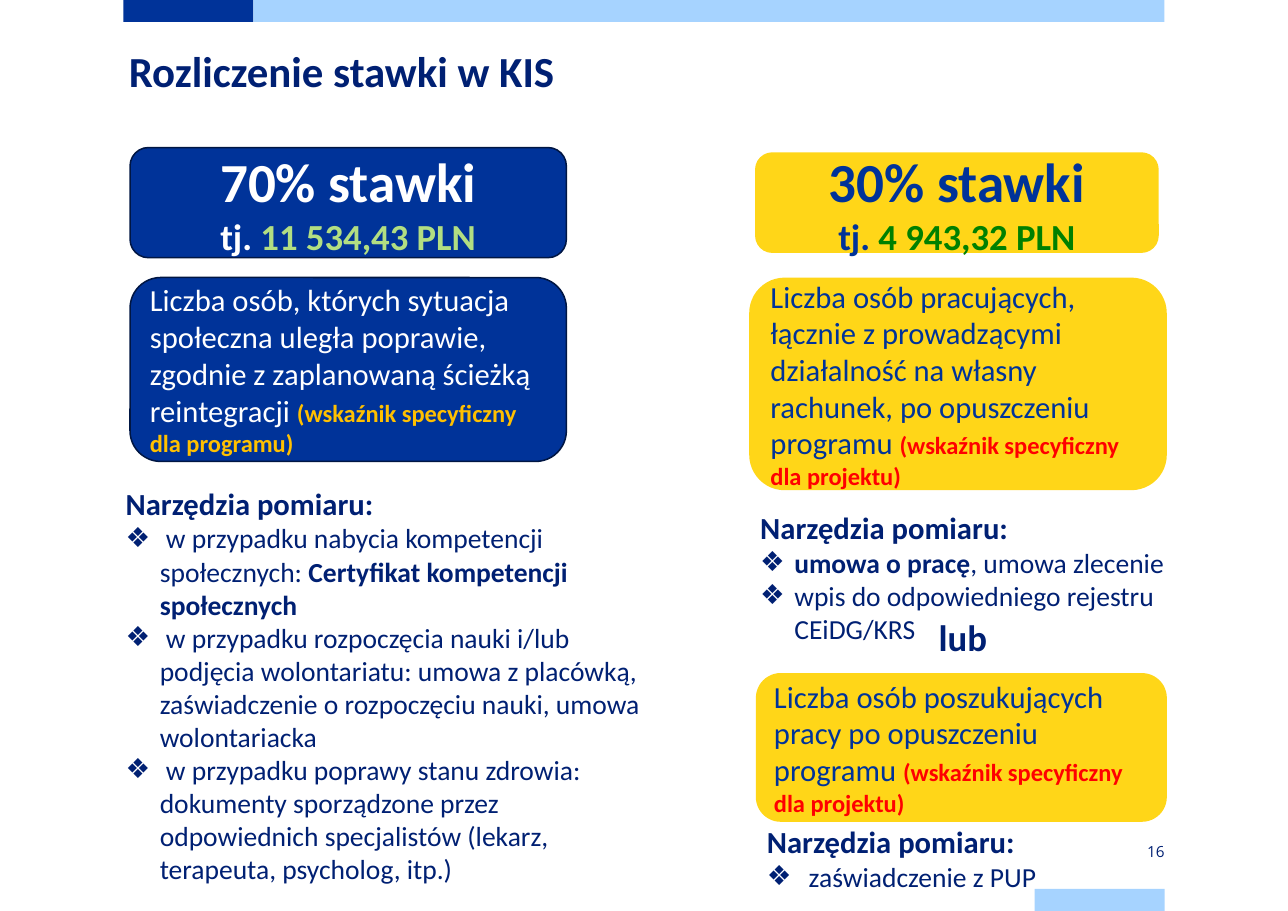
import typing

import lxml.etree
import pptx
import pptx.dml.color
import pptx.enum.shapes
import pptx.enum.text
import pptx.oxml.ns
import pptx.util

RGB = pptx.dml.color.RGBColor
NAVY = RGB(0x00, 0x20, 0x73)
BLUE = RGB(0x00, 0x33, 0x99)
DARK_EDGE = RGB(0x00, 0x16, 0x43)
SKY = RGB(0xA6, 0xD3, 0xFF)
YELLOW = RGB(0xFF, 0xD6, 0x18)
WHITE = RGB(0xFF, 0xFF, 0xFF)
LIME = RGB(0xB2, 0xDE, 0x82)
GREEN = RGB(0x00, 0x80, 0x00)
AMBER = RGB(0xFF, 0xC0, 0x00)
RED = RGB(0xFF, 0x00, 0x00)

ALIGN = pptx.enum.text.PP_ALIGN
ANCHOR = pptx.enum.text.MSO_ANCHOR
SHAPE = pptx.enum.shapes.MSO_SHAPE


class Box(typing.NamedTuple):
    left: float
    top: float
    width: float
    height: float

    def inner(self, left, top, width, height):
        """Box inside this one, given in percent of its size."""
        return Box(self.left + self.width * left / 100,
                   self.top + self.height * top / 100,
                   self.width * width / 100, self.height * height / 100)

    def emu(self):
        return [pptx.util.Inches(length) for length in self]


PAGE = Box(0, 0, 11.69, 8.27)


def add_run(paragraph, text, size, color, bold=False, font="Calibri"):
    run = paragraph.add_run()
    run.text = text
    run.font.name = font
    run.font.size = pptx.util.Pt(size)
    run.font.bold = bold
    run.font.color.rgb = color


def add_panel(slide, box, kind, fill, edge=None):
    panel = slide.shapes.add_shape(kind, *box.emu())
    panel.shadow.inherit = False
    panel.fill.solid()
    panel.fill.fore_color.rgb = fill
    if edge is None:
        panel.line.fill.background()
    else:
        panel.line.color.rgb = edge
        panel.line.width = pptx.util.Pt(1)
    panel.text_frame.vertical_anchor = ANCHOR.MIDDLE
    return panel.text_frame


def fill_placeholder(slide, index, box, anchor=ANCHOR.TOP):
    holder = slide.placeholders[index]
    holder.left, holder.top, holder.width, holder.height = box.emu()
    frame = holder.text_frame
    frame.word_wrap = True
    frame.auto_size = pptx.enum.text.MSO_AUTO_SIZE.NONE
    frame.vertical_anchor = anchor
    return frame


def set_bullet(paragraph, sign=None, indent=0):
    """Hang the paragraph on a bullet sign, or clear the inherited bullet."""
    properties = paragraph._p.get_or_add_pPr()
    hang = pptx.util.Inches(indent)
    properties.set("marL", str(hang))
    properties.set("indent", str(-hang))
    tag = "a:buChar" if sign else "a:buNone"
    bullet = lxml.etree.SubElement(properties, pptx.oxml.ns.qn(tag))
    if sign:
        bullet.set("char", sign)
    paragraph.space_before = pptx.util.Pt(0)
    paragraph.alignment = ALIGN.LEFT


def add_rate(slide, box, share, amount, fill, edge, color, amount_color):
    frame = add_panel(slide, box, SHAPE.ROUNDED_RECTANGLE, fill, edge)
    heading = frame.paragraphs[0]
    add_run(heading, share, 36, color, True)
    value = frame.add_paragraph()
    add_run(value, "tj. ", 24, color, True)
    add_run(value, amount, 24, amount_color, True)
    heading.alignment = value.alignment = ALIGN.CENTER


def add_indicator(slide, box, text, note, fill, edge, color, note_color):
    frame = add_panel(slide, box, SHAPE.ROUNDED_RECTANGLE, fill, edge)
    indicator = frame.paragraphs[0]
    indicator.alignment = ALIGN.LEFT
    add_run(indicator, text, 20, color)
    add_run(indicator, note, 16, note_color, True)


def add_tools(slide, index, box, tools, indent=0.31):
    """List of measuring tools; each tool is a list of (text, bold) runs."""
    frame = fill_placeholder(slide, index, box)
    heading = frame.paragraphs[0]
    set_bullet(heading)
    add_run(heading, "Narzędzia pomiaru:", 20, NAVY, True)
    for tool in tools:
        item = frame.add_paragraph()
        set_bullet(item, "❖", indent)
        for text, bold in tool:
            add_run(item, text, 18, NAVY, bold)


def add_page_frame(slide, page):
    add_panel(slide, page.inner(9.58, 0, 10.09, 2.42), SHAPE.RECTANGLE, BLUE)
    add_panel(slide, page.inner(19.67, 0, 70.74, 2.42), SHAPE.RECTANGLE, SKY)
    add_panel(slide, page.inner(80.33, 97.58, 10.09, 2.42), SHAPE.RECTANGLE, SKY)

    title = fill_placeholder(slide, 0, page.inner(9.15, 4.23, 40, 6.89),
                             ANCHOR.MIDDLE).paragraphs[0]
    title.alignment = ALIGN.LEFT
    add_run(title, "Rozliczenie stawki w KIS", 28, NAVY, True)

    number_box = page.inner(80.33, 92.26, 10.09, 2.42)
    frame = slide.shapes.add_textbox(*number_box.emu()).text_frame
    frame.word_wrap = True
    frame.margin_left = frame.margin_right = 0
    frame.vertical_anchor = ANCHOR.MIDDLE
    number = frame.paragraphs[0]
    number.alignment = ALIGN.RIGHT
    add_run(number, "16", 10, NAVY, font="Open Sans")


def add_social_column(slide, column):
    add_rate(slide, column.inner(2.79, 0, 79.04, 14.75), "70% stawki",
             "11 534,43 PLN", BLUE, DARK_EDGE, WHITE, LIME)
    add_indicator(slide, column.inner(2.79, 17.4, 79.04, 24.63),
                  "Liczba osób, których sytuacja społeczna uległa poprawie, "
                  "zgodnie z zaplanowaną ścieżką reintegracji ",
                  "(wskaźnik specyficzny dla programu)",
                  BLUE, DARK_EDGE, WHITE, AMBER)
    add_tools(slide, 2, column.inner(0, 44.4, 100, 55.6), [
        [(" w przypadku nabycia kompetencji społecznych: ", False),
         ("Certyfikat kompetencji społecznych", True)],
        [(" w przypadku rozpoczęcia nauki i/lub podjęcia wolontariatu: "
          "umowa z placówką, zaświadczenie o rozpoczęciu nauki, "
          "umowa wolontariacka", False)],
        [(" w przypadku poprawy stanu zdrowia: dokumenty sporządzone przez "
          "odpowiednich specjalistów (lekarz, terapeuta, psycholog, itp.)",
          False)],
    ])


def add_work_column(slide, column):
    project_note = "(wskaźnik specyficzny dla projektu)"
    add_rate(slide, column.inner(1.49, 0.73, 90.35, 13.14), "30% stawki",
             "4 943,32 PLN", YELLOW, YELLOW, BLUE, GREEN)
    add_indicator(slide, column.inner(0, 17.23, 93.81, 28.18),
                  "Liczba osób pracujących, łącznie z prowadzącymi działalność "
                  "na własny rachunek, po opuszczeniu programu ",
                  project_note, YELLOW, None, BLUE, RED)
    add_tools(slide, 4, column.inner(0, 47.15, 100, 19.71), [
        [("umowa o pracę", True), (", umowa zlecenie", False)],
        [("wpis do odpowiedniego rejestru CEiDG/KRS", False)],
    ])

    either = fill_placeholder(
        slide, 3, column.inner(40.1, 61.17, 19.55, 7.3)).paragraphs[0]
    set_bullet(either)
    add_run(either, "lub", 24, NAVY, True)

    add_indicator(slide, column.inner(1.49, 69.64, 92.33, 19.71),
                  "Liczba osób poszukujących pracy po opuszczeniu programu ",
                  project_note, YELLOW, None, BLUE, RED)
    add_tools(slide, 1, column.inner(1.49, 88.76, 74.26, 11.24),
              [[("zaświadczenie z PUP", False)]], indent=0.38)


def main():
    deck = pptx.Presentation()
    deck.slide_width, deck.slide_height = PAGE.emu()[2:]
    slide = deck.slides.add_slide(deck.slide_layouts.get_by_name("Comparison"))
    add_page_frame(slide, PAGE)
    add_social_column(slide, PAGE.inner(8.9, 16.2, 42.86, 81.98))
    add_work_column(slide, PAGE.inner(58.17, 16.2, 34.56, 82.83))
    deck.save("out.pptx")


if __name__ == "__main__":
    main()
